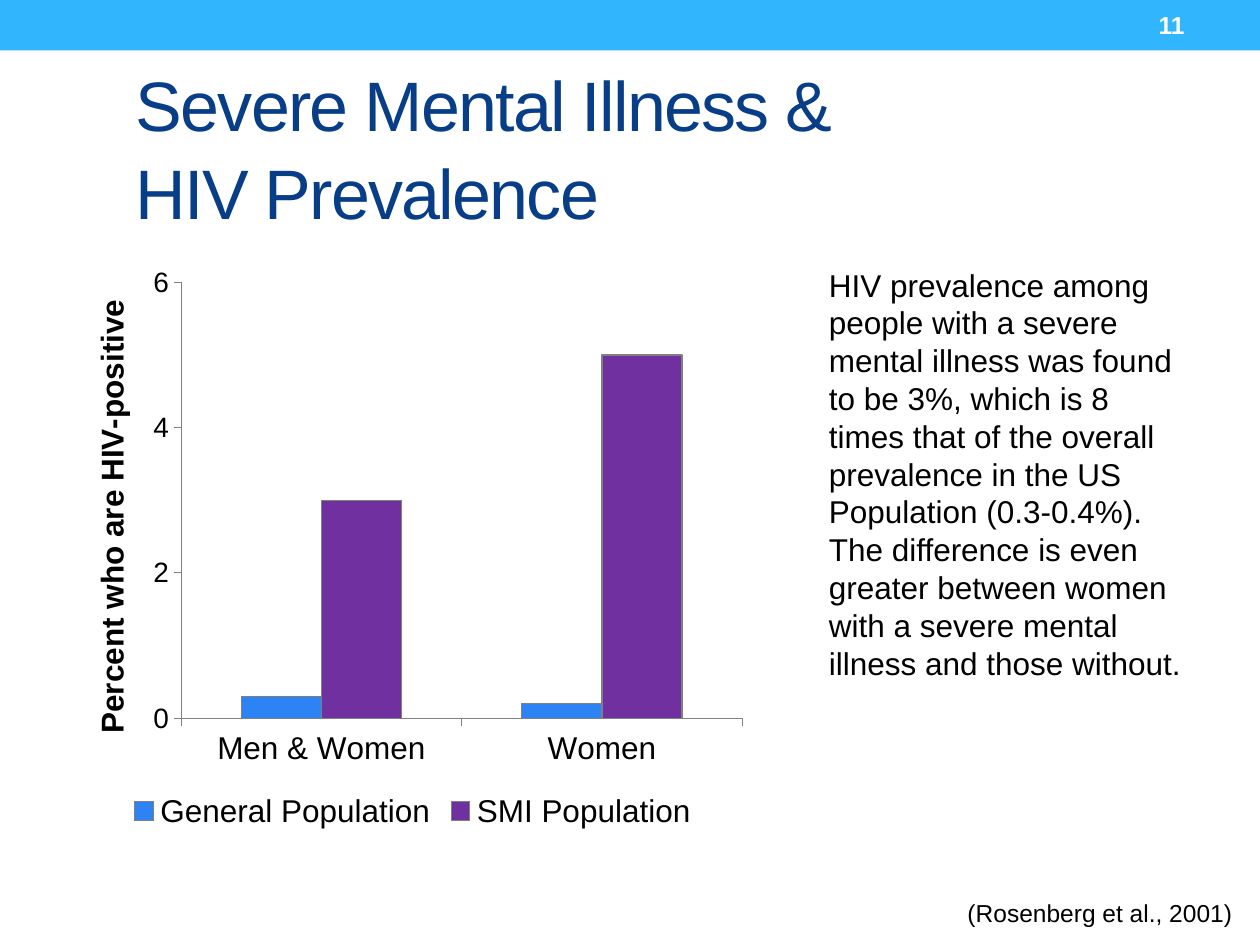
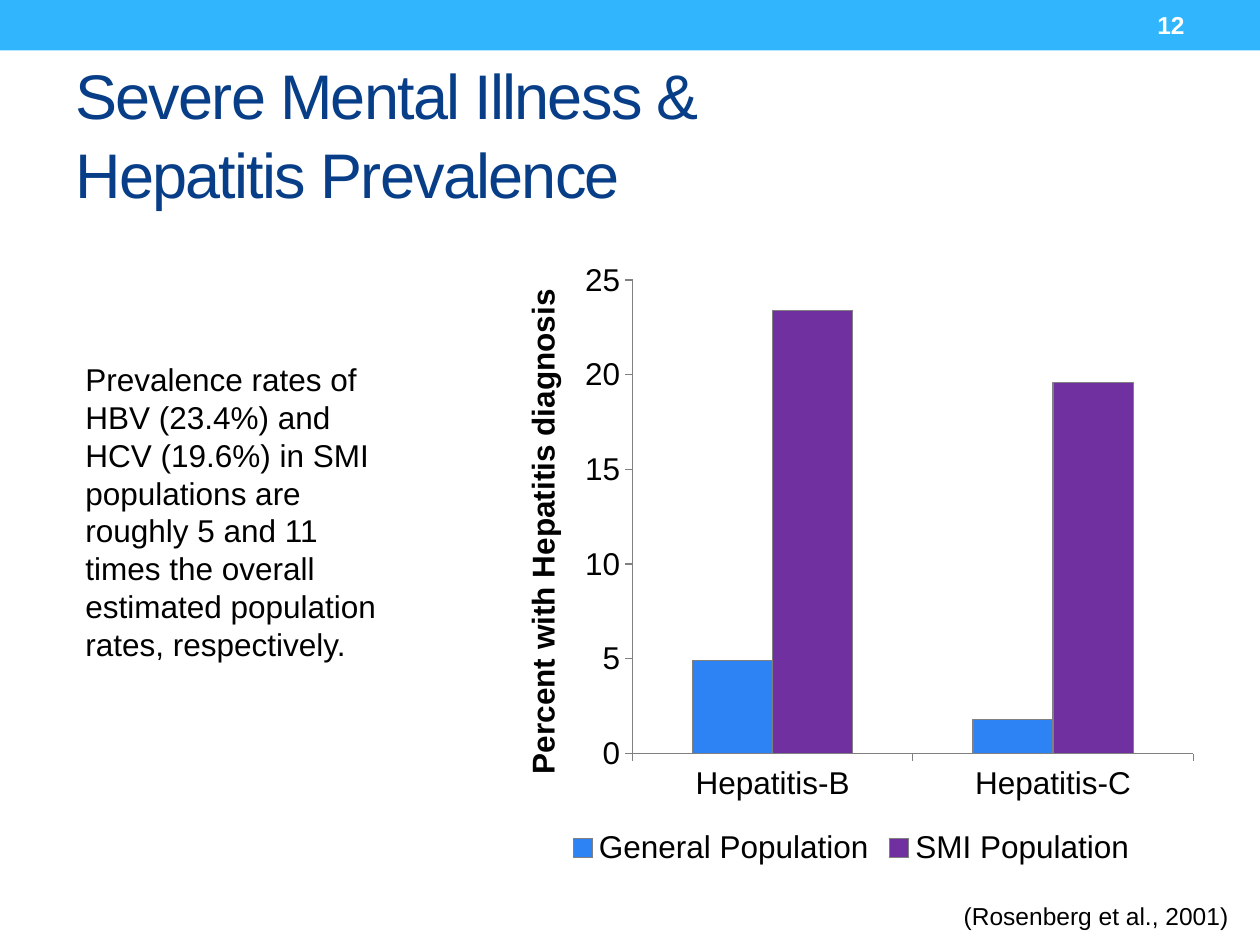
from lxml.etree import SubElement
from pptx import Presentation
from pptx.chart.data import CategoryChartData
from pptx.dml.color import RGBColor
from pptx.enum.chart import XL_CHART_TYPE, XL_LEGEND_POSITION, XL_TICK_MARK
from pptx.enum.shapes import MSO_SHAPE
from pptx.enum.text import MSO_ANCHOR, MSO_AUTO_SIZE, PP_ALIGN
from pptx.oxml import parse_xml
from pptx.oxml.ns import nsdecls, qn
from pptx.util import Inches, Pt

FONT = "Arial"
COLORS = {
    "band": "31B6FD",
    "title": "073E87",
    "text": "000000",
    "number": "FFFFFF",
    "general": "2D83F4",
    "smi": "7030A0",
    "outline": "808080",
}
SERIES = [("General Population", "general"), ("SMI Population", "smi")]
CITATION = "(Rosenberg et al., 2001)"
BODY_SIZE = 18


def color(name):
    """Return the named palette colour."""
    return RGBColor.from_string(COLORS[name])


def style_font(font, size, name="text", bold=False):
    """Apply the deck's typeface with a size, colour and weight."""
    font.name = FONT
    font.size = Pt(size)
    font.bold = bold
    font.color.rgb = color(name)


def add_text(page, box, text, size, name="text", bold=False, wrap=True):
    """Add a one-paragraph text box and return its shape."""
    shape = page.shapes.add_textbox(*map(Inches, box))
    frame = shape.text_frame
    frame.word_wrap = wrap
    frame.text = text
    for span in frame.paragraphs[0].runs:
        style_font(span.font, size, name, bold)
    return shape


def add_band(page, number):
    """Draw the top band with the slide number."""
    band = page.shapes.add_shape(MSO_SHAPE.RECTANGLE, 0, 0, Inches(10), Inches(0.4))
    band.shadow.inherit = False
    band.fill.solid()
    band.fill.fore_color.rgb = color("band")
    band.line.fill.background()
    label = add_text(page, (8.33, 0.02, 1.17, 0.36), str(number), 14, "number", bold=True)
    label.text_frame.vertical_anchor = MSO_ANCHOR.MIDDLE
    label.text_frame.paragraphs[0].alignment = PP_ALIGN.RIGHT


def add_title(page, box, text, size):
    """Add a two-line title with tightened letter spacing."""
    frame = add_text(page, box, text, size, "title").text_frame
    frame.vertical_anchor = MSO_ANCHOR.MIDDLE
    para = frame.paragraphs[0]
    para.line_spacing = 1.05
    for span in para.runs:
        span.font._element.set("spc", "-100")


def add_body(page, box, text):
    """Add the explanatory paragraph beside the chart."""
    shape = add_text(page, box, text, BODY_SIZE)
    shape.text_frame.auto_size = MSO_AUTO_SIZE.SHAPE_TO_FIT_TEXT


def add_citation(page, box):
    """Add the source reference at the bottom right."""
    shape = add_text(page, box, CITATION, 14, wrap=False)
    shape.text_frame.auto_size = MSO_AUTO_SIZE.SHAPE_TO_FIT_TEXT


def place_plot(chart, box, plot_box):
    """Fix the inner plot area, given in inches on the slide."""
    left, top, width, height = box
    x, y, w, h = plot_box
    shares = {
        "x": (x - left) / width,
        "y": (y - top) / height,
        "w": w / width,
        "h": h / height,
    }
    area = chart.element.find(".//" + qn("c:plotArea"))
    for old in area.findall(qn("c:layout")):
        area.remove(old)
    layout = parse_xml(f"<c:layout {nsdecls('c')}/>")
    manual = SubElement(layout, qn("c:manualLayout"))
    settings = {"layoutTarget": "inner", "xMode": "edge", "yMode": "edge"}
    settings.update({key: f"{share:.3f}" for key, share in shares.items()})
    for key, value in settings.items():
        SubElement(manual, qn(f"c:{key}")).set("val", value)
    area.insert(0, layout)


def style_axis(axis, size):
    """Give an axis outside ticks, a grey line and no gridlines."""
    axis.has_major_gridlines = False
    axis.major_tick_mark = XL_TICK_MARK.OUTSIDE
    axis.minor_tick_mark = XL_TICK_MARK.NONE
    axis.format.line.color.rgb = color("outline")
    axis.format.line.width = Pt(0.75)
    style_font(axis.tick_labels.font, size)


def add_prevalence_chart(page, box, plot_box, categories, rows, axis_title,
                         top, step, tick_size=BODY_SIZE):
    """Add a column chart comparing the two populations."""
    data = CategoryChartData()
    data.categories = categories
    for (name, _), values in zip(SERIES, rows):
        data.add_series(name, values)
    chart = page.shapes.add_chart(
        XL_CHART_TYPE.COLUMN_CLUSTERED, *map(Inches, box), data).chart
    style_font(chart.font, BODY_SIZE)
    chart.has_title = False
    chart.has_legend = True
    chart.legend.position = XL_LEGEND_POSITION.BOTTOM
    chart.legend.include_in_layout = False
    style_font(chart.legend.font, BODY_SIZE)

    plot = chart.plots[0]
    plot.gap_width = 150
    plot.vary_by_categories = False
    for series, (_, fill_name) in zip(plot.series, SERIES):
        series.format.fill.solid()
        series.format.fill.fore_color.rgb = color(fill_name)
        series.format.line.color.rgb = color("outline")
        series.format.line.width = Pt(0.75)

    style_axis(chart.category_axis, BODY_SIZE)
    value_axis = chart.value_axis
    style_axis(value_axis, tick_size)
    value_axis.minimum_scale = 0
    value_axis.maximum_scale = top
    value_axis.major_unit = step
    value_axis.tick_labels.number_format = "0"
    value_axis.tick_labels.number_format_is_linked = False
    frame = value_axis.axis_title.text_frame
    frame.text = axis_title
    style_font(frame.paragraphs[0].runs[0].font, BODY_SIZE, bold=True)
    place_plot(chart, box, plot_box)


def add_hiv_slide(page):
    """Build the HIV prevalence slide."""
    add_band(page, 11)
    add_title(page, (0.98, 0.42, 8.77, 1.47), "Severe Mental Illness & \vHIV Prevalence", 40)
    add_prevalence_chart(
        page, (0.55, 2.03, 5.45, 4.6), (1.44, 2.24, 4.45, 3.46),
        ["Men & Women", "Women"], [(0.3, 0.2), (3, 5)],
        "Percent who are HIV-positive", top=6, step=2, tick_size=16)
    add_body(page, (6.48, 2.06, 3.05, 3.74),
             "HIV prevalence among people with a severe mental illness was found "
             "to be 3%, which is 8 times that of the overall prevalence in the US "
             "Population (0.3-0.4%). The difference is even greater between women "
             "with a severe mental illness and those without.")
    add_citation(page, (7.58, 7.08, 2.31, 0.34))


def add_hepatitis_slide(page):
    """Build the hepatitis prevalence slide."""
    add_band(page, 12)
    add_title(page, (0.5, 0.42, 9, 1.25), "Severe Mental Illness & \vHepatitis Prevalence", 36)
    add_prevalence_chart(
        page, (3.92, 1.98, 5.67, 4.94), (5.02, 2.22, 4.45, 3.76),
        ["Hepatitis-B", "Hepatitis-C"], [(4.9, 1.8), (23.4, 19.6)],
        "Percent with Hepatitis diagnosis", top=25, step=5)
    add_body(page, (0.58, 2.81, 2.67, 2.52),
             "Prevalence rates of HBV (23.4%) and HCV (19.6%) in SMI populations "
             "are roughly 5 and 11 times the overall estimated population rates, "
             "respectively.")
    add_citation(page, (7.55, 7.1, 2.37, 0.34))


def main():
    """Build and save the deck."""
    deck = Presentation()
    deck.slide_width = Inches(10)
    deck.slide_height = Inches(7.5)
    for build in (add_hiv_slide, add_hepatitis_slide):
        build(deck.slides.add_slide(deck.slide_layouts[6]))
    deck.save("out.pptx")


if __name__ == "__main__":
    main()
